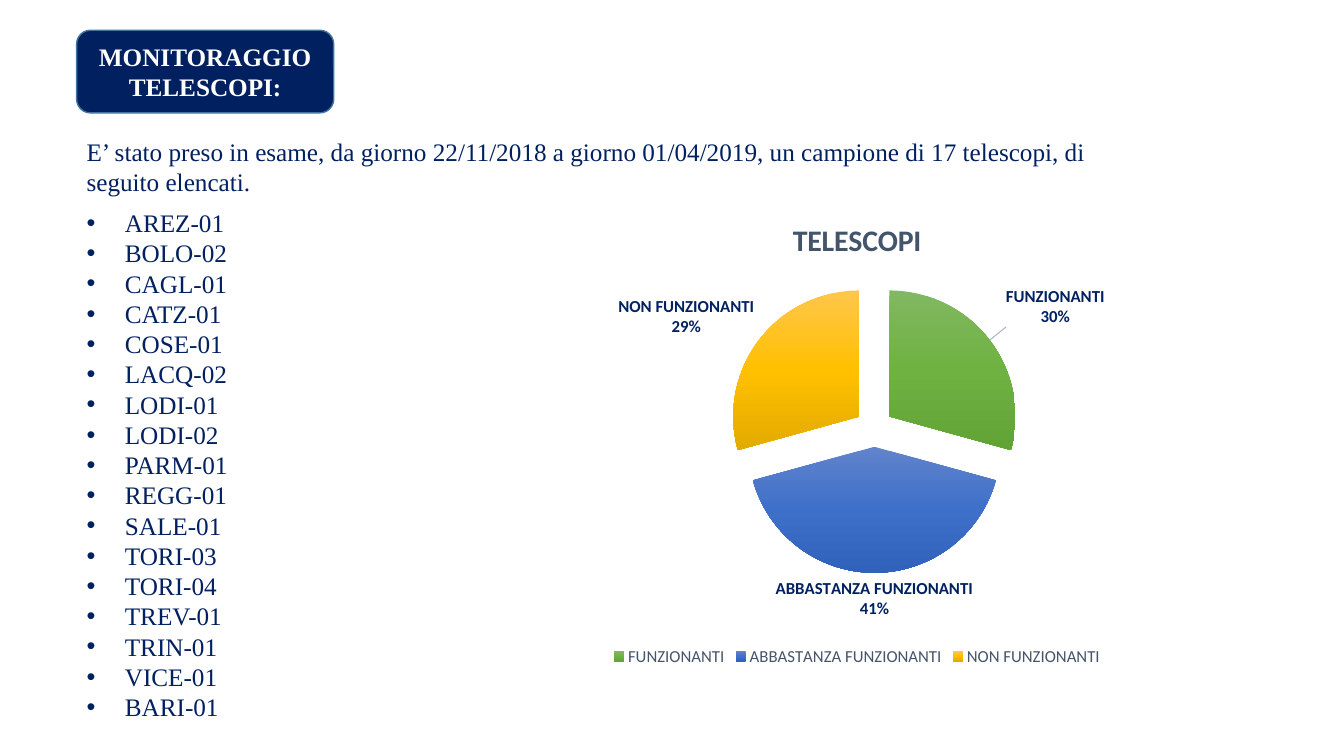
from lxml import etree
from copy import deepcopy

from pptx import Presentation
from pptx.chart.data import CategoryChartData
from pptx.dml.color import RGBColor
from pptx.enum.chart import XL_CHART_TYPE, XL_LABEL_POSITION, XL_LEGEND_POSITION
from pptx.enum.shapes import MSO_SHAPE
from pptx.enum.text import MSO_ANCHOR, PP_ALIGN
from pptx.oxml import parse_xml
from pptx.oxml.ns import nsdecls, qn
from pptx.util import Inches, Pt

PIE = XL_CHART_TYPE.PIE_EXPLODED
OUTSIDE = XL_LABEL_POSITION.OUTSIDE_END
BOTTOM = XL_LEGEND_POSITION.BOTTOM
ROUNDED = MSO_SHAPE.ROUNDED_RECTANGLE
MIDDLE = MSO_ANCHOR.MIDDLE
LEFT, CENTER = PP_ALIGN.LEFT, PP_ALIGN.CENTER

NAVY, SLATE, WHITE = "002060", "44546A", "FFFFFF"
SERIF, SANS = "Times New Roman", "Calibri"

INTRO = ("E’ stato preso in esame, da giorno 22/11/2018 a giorno 01/04/2019, "
         "un campione di 17 telescopi, di seguito elencati.")
TELESCOPES = [
    "AREZ-01", "BOLO-02", "CAGL-01", "CATZ-01", "COSE-01", "LACQ-02",
    "LODI-01", "LODI-02", "PARM-01", "REGG-01", "SALE-01", "TORI-03",
    "TORI-04", "TREV-01", "TRIN-01", "VICE-01", "BARI-01",
]
# Category, value, label percentage, gradient from top to bottom
SLICES = [
    ("FUNZIONANTI", 29, "30%", ("81B861", "6FB242", "62A336")),
    ("ABBASTANZA FUNZIONANTI", 41, "41%", ("6183CB", "3E70CA", "3062BB")),
    ("NON FUNZIONANTI", 29, "29%", ("FFC64B", "FFC000", "E3AB00")),
]


def color(value):
    return RGBColor.from_string(value)


def style_font(font, size, tint, face, bold=False):
    font.size, font.name, font.bold = Pt(size), face, bold
    font.color.rgb = color(tint)


def write(frame, lines, size=18, tint=NAVY, face=SERIF, bold=False,
          align=LEFT, bullet=None):
    """Fill a text frame with one paragraph per line."""
    for index, line in enumerate(lines):
        para = frame.add_paragraph() if index else frame.paragraphs[0]
        para.alignment = align
        span = para.add_run()
        span.text = line
        style_font(span.font, size, tint, face, bold)
        if bullet:
            properties = para._p.get_or_add_pPr()
            properties.set("marL", str(Inches(0.38)))
            properties.set("indent", str(-Inches(0.38)))
            etree.SubElement(properties, qn("a:buFont")).set("typeface", "Arial")
            etree.SubElement(properties, qn("a:buChar")).set("char", bullet)


def manual_layout(**settings):
    """Build a chart layout; settings keep the order the schema asks for."""
    items = "".join(f'<c:{name} val="{value}"/>' for name, value in settings.items())
    return parse_xml(f'<c:layout {nsdecls("c")}><c:manualLayout>{items}'
                     "</c:manualLayout></c:layout>")


def place_after(anchor, layout):
    """Put a layout after its anchor in place of any earlier one."""
    following = anchor.getnext()
    if following is not None and following.tag == qn("c:layout"):
        following.getparent().remove(following)
    anchor.addnext(layout)


class SlideBuilder:
    def __init__(self, slide):
        self.slide = slide

    def banner(self, text, left, top, width, height):
        box = self.slide.shapes.add_shape(
            ROUNDED, Inches(left), Inches(top), Inches(width), Inches(height))
        box.shadow.inherit = False
        box.fill.solid()
        box.fill.fore_color.rgb = color(NAVY)
        box.line.color.rgb = color("43739E")
        box.line.width = Pt(1)
        box.text_frame.word_wrap = True
        box.text_frame.vertical_anchor = MIDDLE
        write(box.text_frame, [text], tint=WHITE, bold=True, align=CENTER)

    def text(self, lines, left, top, width, height, **formats):
        box = self.slide.shapes.add_textbox(
            Inches(left), Inches(top), Inches(width), Inches(height))
        box.text_frame.word_wrap = True
        write(box.text_frame, lines, **formats)

    def pie(self, title, slices, left, top, width, height):
        data = CategoryChartData()
        data.categories = [name for name, *_ in slices]
        data.add_series(title, [value for _, value, *_ in slices])
        chart = self.slide.shapes.add_chart(
            PIE, Inches(left), Inches(top), Inches(width), Inches(height), data).chart
        style_font(chart.font, 10, "000000", SANS)
        chart.has_title = True
        write(chart.chart_title.text_frame, [title], size=21.3, tint=SLATE,
              face=SANS, bold=True, align=CENTER)
        chart.has_legend = True
        chart.legend.position = BOTTOM
        chart.legend.include_in_layout = False
        style_font(chart.legend.font, 12, SLATE, SANS)

        plot = chart.plots[0]
        plot.vary_by_categories = True
        series = plot.series[0]
        for explosion in series._element.xpath("c:explosion"):
            explosion.set("val", "15")
        for index, (name, _, percent, stops) in enumerate(slices):
            point = series.points[index]
            self.gradient(point.format.fill, series, stops)
            point.format.line.fill.background()
            write(point.data_label.text_frame, [name, percent], size=12,
                  face=SANS, bold=True, align=CENTER)
            point.data_label.position = OUTSIDE
        self.arrange(chart, series)

    def gradient(self, fill, series, stops):
        """Give the newest pie slice a vertical gradient of three stops."""
        fill.gradient()
        fill.gradient_angle = 270
        stop_list = series._element.xpath(".//a:gsLst")[-1]
        stop_list.insert(1, deepcopy(stop_list[0]))
        for index, (stop, tint) in enumerate(zip(fill.gradient_stops, stops)):
            stop.color.rgb = color(tint)
            stop.position = index / 2

    def arrange(self, chart, series):
        """Place title, pie and first label, and draw the leader line."""
        root = chart._chartSpace
        place_after(root.xpath("c:chart/c:title/c:tx")[0],
                    manual_layout(xMode="edge", yMode="edge", x=0.44, y=0.05))
        area = root.xpath("c:chart/c:plotArea")[0]
        for layout in area.xpath("c:layout"):
            area.remove(layout)
        area.insert(0, manual_layout(layoutTarget="inner", xMode="edge", yMode="edge",
                                     x=0.39, y=0.19, w=0.25, h=0.61))
        place_after(series._element.xpath(".//c:dLbl/c:idx")[0],
                    manual_layout(x=0.01, y=-0.02))
        for leader in series._element.xpath("c:dLbls/c:showLeaderLines"):
            leader.set("val", "1")
            leader.addnext(parse_xml(
                f'<c:leaderLines {nsdecls("c", "a")}><c:spPr><a:ln w="9525"><a:solidFill>'
                '<a:srgbClr val="ADB5C2"/></a:solidFill></a:ln></c:spPr></c:leaderLines>'))


def main():
    deck = Presentation()
    deck.slide_width, deck.slide_height = Inches(13.33), Inches(7.5)
    page = SlideBuilder(deck.slides.add_slide(deck.slide_layouts[6]))
    page.banner("MONITORAGGIO TELESCOPI:", 0.76, 0.3, 2.55, 0.82)
    page.text([INTRO], 0.76, 1.3, 10.31, 0.71)
    page.text(TELESCOPES, 0.76, 2.01, 1.99, 5.25, bullet="•")
    page.pie("TELESCOPI", SLICES, 2.75, 1.89, 11.5, 4.76)
    deck.save("out.pptx")


if __name__ == "__main__":
    main()
